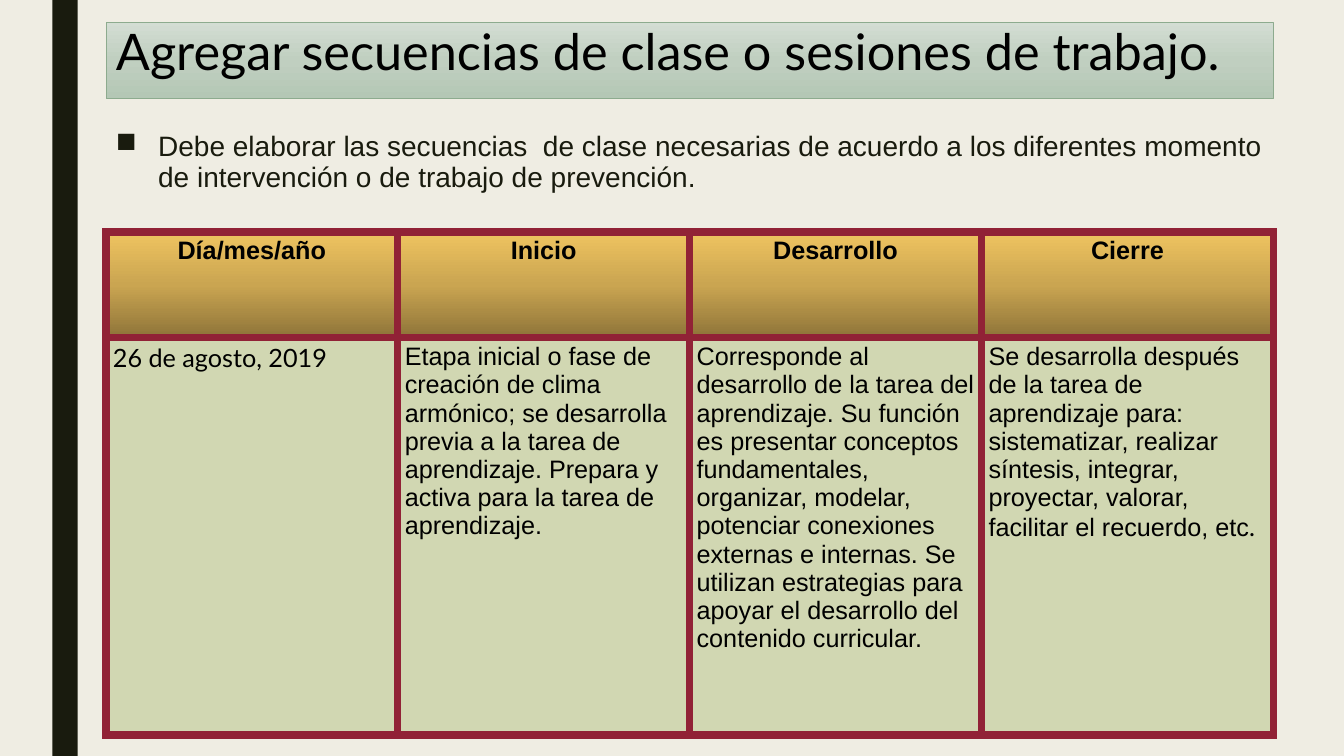
from pptx import Presentation
from pptx.dml.color import RGBColor
from pptx.enum.shapes import MSO_SHAPE as Shape
from pptx.enum.text import MSO_ANCHOR as Anchor, PP_ALIGN as Align
from pptx.oxml import parse_xml
from pptx.oxml.ns import nsdecls, qn
from pptx.util import Inches, Pt

CREAM = RGBColor(0xEF, 0xED, 0xE3)
DARK = RGBColor(0x19, 0x1B, 0x0E)
BLACK = RGBColor(0x00, 0x00, 0x00)
GREEN_LINE = RGBColor(0x8D, 0xAB, 0x8E)
BORDER = RGBColor(0x91, 0x22, 0x36)
CELL_GREEN = RGBColor(0xD1, 0xD7, 0xB2)
SAGE = [RGBColor(0xD3, 0xDD, 0xD3), RGBColor(0xC0, 0xCF, 0xC0), RGBColor(0xB4, 0xC7, 0xB5)]
GOLD = [RGBColor(0x8E, 0x74, 0x39), RGBColor(0xCA, 0xA5, 0x51), RGBColor(0xEF, 0xC4, 0x60)]

TITLE = "Agregar secuencias de clase o sesiones de trabajo."
INSTRUCTION = ("Debe elaborar las secuencias  de clase necesarias de acuerdo a los diferentes "
               "momento de intervención o de trabajo de prevención.")
HEADERS = ["Día/mes/año", "Inicio", "Desarrollo", "Cierre"]
# Each cell is a list of (text, font) runs
SESSION = [
    [("26 de agosto, 2019", "Lato")],
    [("Etapa inicial o fase de creación de clima armónico; se desarrolla previa a la tarea "
      "de aprendizaje. Prepara y activa para la tarea de aprendizaje.", "Arial")],
    [("Corresponde al desarrollo de la tarea del aprendizaje. Su función es presentar "
      "conceptos fundamentales, organizar, modelar, potenciar conexiones externas e "
      "internas. Se utilizan estrategias para apoyar el desarrollo del contenido "
      "curricular.", "Arial")],
    [("Se desarrolla después de la tarea de aprendizaje para: sistematizar, realizar "
      "síntesis, integrar, proyectar, valorar, facilitar el recuerdo, etc", "Arial"),
     (".", "Lato")],
]


class SlideBuilder:
    """Holds the slide and the shared style."""

    def __init__(self, slide):
        self.slide = slide
        slide.background.fill.solid()
        slide.background.fill.fore_color.rgb = CREAM

    def place(self, shape, left, top, width, height):
        shape.left, shape.top = Inches(left), Inches(top)
        shape.width, shape.height = Inches(width), Inches(height)

    def add_run(self, paragraph, text, size, font="Arial", color=BLACK, bold=False):
        run = paragraph.add_run()
        run.text = text
        run.font.name, run.font.size, run.font.bold = font, Pt(size), bold
        run.font.color.rgb = color

    def gradient(self, fill, properties, colors, angle):
        fill.gradient()
        stops = "".join(f'<a:gs pos="{50000 * i}"><a:srgbClr val="{color}"/></a:gs>'
                        for i, color in enumerate(colors))
        properties.replace(properties.find(qn("a:gradFill")), parse_xml(
            f'<a:gradFill {nsdecls("a")} rotWithShape="1"><a:gsLst>{stops}</a:gsLst>'
            f'<a:lin ang="{angle * 60000}" scaled="0"/></a:gradFill>'))

    def bar(self, left, top, width, height, color):
        shape = self.slide.shapes.add_shape(
            Shape.RECTANGLE, Inches(left), Inches(top), Inches(width), Inches(height))
        shape.shadow.inherit = False
        shape.fill.solid()
        shape.fill.fore_color.rgb = color
        shape.line.fill.background()

    def title(self, text, left, top, width, height):
        shape = self.slide.shapes.title
        self.place(shape, left, top, width, height)
        self.gradient(shape.fill, shape.element.spPr, SAGE, 90)
        shape.line.color.rgb = GREEN_LINE
        shape.line.width = Pt(0.5)
        frame = shape.text_frame
        frame.word_wrap = True
        frame.vertical_anchor = Anchor.TOP
        paragraph = frame.paragraphs[0]
        paragraph.alignment = Align.LEFT
        paragraph.line_spacing = 0.89
        self.add_run(paragraph, text, 36, "Lato")

    def bullet(self, text, left, top, width, height):
        shape = self.slide.shapes.add_textbox(
            Inches(left), Inches(top), Inches(width), Inches(height))
        shape.text_frame.word_wrap = True
        paragraph = shape.text_frame.paragraphs[0]
        paragraph.line_spacing = 0.94
        paragraph.space_before, paragraph.space_after = Pt(10), Pt(2)
        properties = paragraph._p.get_or_add_pPr()
        properties.set("marL", str(Inches(0.42)))
        properties.set("indent", str(-Inches(0.42)))
        properties.append(parse_xml(f'<a:buChar {nsdecls("a")} char="■"/>'))
        self.add_run(paragraph, text, 20, color=DARK)

    def cell(self, cell, runs, header):
        cell.margin_left = cell.margin_right = Inches(0.07)
        properties = cell._tc.get_or_add_tcPr()
        for side in ("lnL", "lnR", "lnT", "lnB"):
            properties.append(parse_xml(
                f'<a:{side} {nsdecls("a")} w="{Pt(6)}"><a:solidFill>'
                f'<a:srgbClr val="{BORDER}"/></a:solidFill></a:{side}>'))
        if header:
            self.gradient(cell.fill, properties, GOLD, 270)
        else:
            cell.fill.solid()
            cell.fill.fore_color.rgb = CELL_GREEN
        paragraph = cell.text_frame.paragraphs[0]
        paragraph.alignment = Align.CENTER if header else Align.LEFT
        for text, font in runs:
            self.add_run(paragraph, text, 18, font, bold=header)

    def table(self, rows, left, top, width, heights):
        table = self.slide.shapes.add_table(
            len(rows), len(rows[0]), Inches(left), Inches(top),
            Inches(width), Inches(sum(heights))).table
        table.horz_banding = False
        for row_index, (row, height) in enumerate(zip(rows, heights)):
            table.rows[row_index].height = Inches(height)
            for column_index, runs in enumerate(row):
                self.cell(table.cell(row_index, column_index), runs, row_index == 0)


def main():
    presentation = Presentation()
    presentation.slide_width, presentation.slide_height = Inches(13.33), Inches(7.5)
    builder = SlideBuilder(presentation.slides.add_slide(presentation.slide_layouts[5]))

    # Side bar, title and instruction
    builder.bar(0.52, 0, 0.25, 7.5, DARK)
    builder.title(TITLE, 1.05, 0.22, 11.58, 0.76)
    builder.bullet(INSTRUCTION, 1.05, 1.25, 11.78, 0.76)

    # Session plan
    header_row = [[(name, "Arial")] for name in HEADERS]
    builder.table([header_row, SESSION], 1.05, 2.3, 11.58, [1.05, 3.94])

    presentation.save("out.pptx")


if __name__ == "__main__":
    main()
